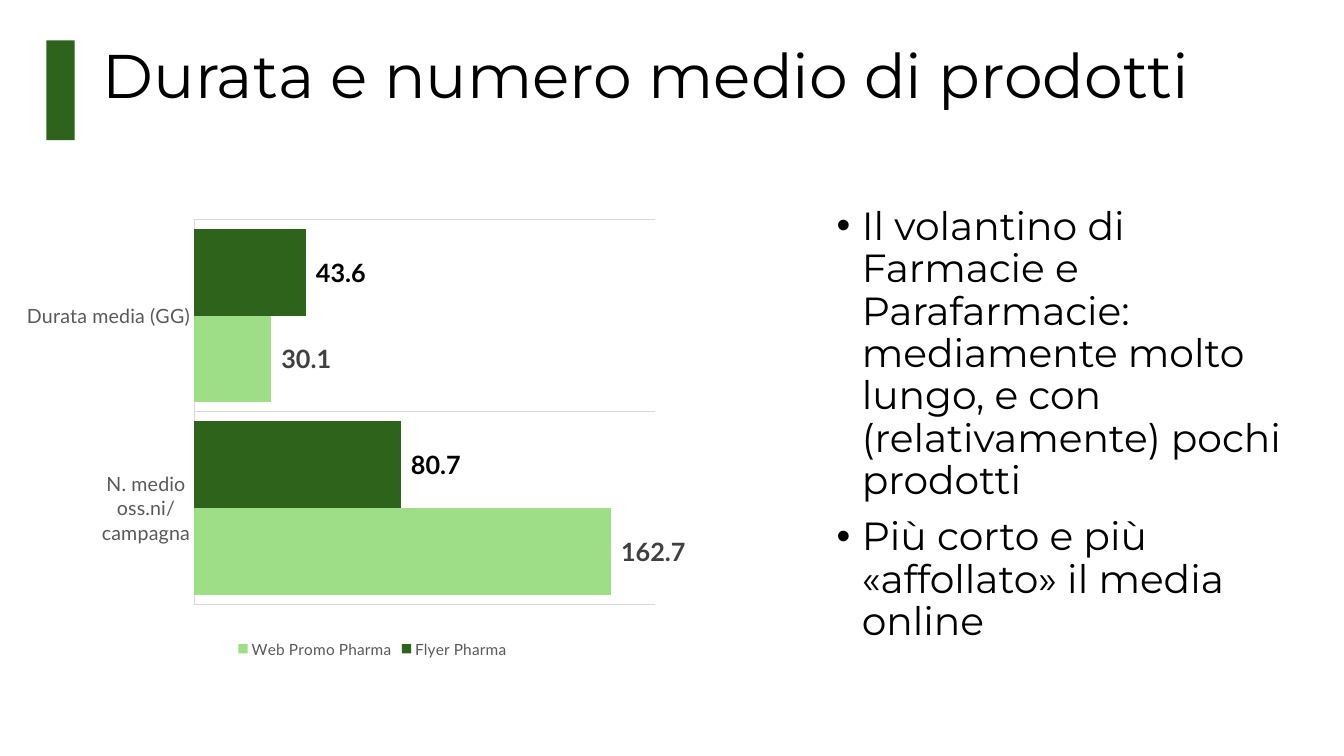
import dataclasses

import lxml.etree
import pptx
import pptx.chart.chart
import pptx.chart.data
import pptx.chart.series
import pptx.dml.color
import pptx.enum.chart
import pptx.enum.shapes
import pptx.oxml.ns
import pptx.slide
import pptx.text.text
import pptx.util

Inches = pptx.util.Inches
qn = pptx.oxml.ns.qn


def rgb(value: str) -> pptx.dml.color.RGBColor:
    return pptx.dml.color.RGBColor.from_string(value)


@dataclasses.dataclass(frozen=True)
class Theme:
    text_font: str = "Montserrat"
    chart_font: str = "Lato"
    black: str = "000000"
    dark_green: str = "2E631B"
    light_green: str = "9DDE86"
    label_gray: str = "404040"
    axis_gray: str = "595959"
    grid_gray: str = "D9D9D9"
    title_size: int = 44
    body_size: int = 28
    value_size: int = 18
    category_size: int = 14
    legend_size: int = 11
    chart_size: int = 10


THEME = Theme()
NUMBER_FORMAT = '_-* #,##0.0_-;\\-* #,##0.0_-;_-* "-"??_-;'


@dataclasses.dataclass(frozen=True)
class Area:
    left: float
    top: float
    width: float
    height: float

    def lengths(self) -> tuple:
        return tuple(Inches(value) for value in dataclasses.astuple(self))


@dataclasses.dataclass(frozen=True)
class BarSeries:
    name: str
    values: tuple
    fill: str
    label_color: str


CATEGORIES = ("Durata media (GG)", "N. medio oss.ni/campagna")
SERIES = (
    BarSeries("Flyer Pharma", (43.6, 80.7), THEME.dark_green, THEME.black),
    BarSeries("Web Promo Pharma", (30.1, 162.7), THEME.light_green, THEME.label_gray),
)
TITLE = ("Durata e numero medio di prodotti",)
POINTS = (
    "Il volantino di Farmacie e Parafarmacie: mediamente molto lungo, "
    "e con (relativamente) pochi prodotti",
    "Più corto e più «affollato» il media online",
)


def style_font(font: pptx.text.text.Font, name: str, size: int, color: str,
               bold: bool = False) -> None:
    font.name = name
    font.size = pptx.util.Pt(size)
    font.bold = bold
    font.color.rgb = rgb(color)


def add_bullet(para) -> None:
    properties = para._p.get_or_add_pPr()
    properties.set("marL", str(Inches(0.25)))
    properties.set("indent", str(Inches(-0.25)))
    lxml.etree.SubElement(properties, qn("a:buFont")).set("typeface", "Arial")
    lxml.etree.SubElement(properties, qn("a:buChar")).set("char", "•")


def add_text(page: pptx.slide.Slide, area: Area, lines: tuple, size: int,
             bulleted: bool = False) -> None:
    frame = page.shapes.add_textbox(*area.lengths()).text_frame
    frame.word_wrap = True
    for index, line in enumerate(lines):
        para = frame.add_paragraph() if index else frame.paragraphs[0]
        if bulleted:
            add_bullet(para)
        para.line_spacing = 0.9
        if index:
            para.space_before = pptx.util.Pt(10)
        span = para.add_run()
        span.text = line
        style_font(span.font, THEME.text_font, size, THEME.black)


def add_accent(page: pptx.slide.Slide, area: Area) -> None:
    bar = page.shapes.add_shape(pptx.enum.shapes.MSO_SHAPE.RECTANGLE, *area.lengths())
    bar.shadow.inherit = False
    bar.fill.solid()
    bar.fill.fore_color.rgb = rgb(THEME.dark_green)
    bar.line.fill.background()


def place_plot(chart: pptx.chart.chart.Chart, area: Area) -> None:
    """Fix the inner plot area, in fractions of the chart."""
    plot_area = chart._chartSpace.chart.plotArea
    for old in plot_area.findall(qn("c:layout")):
        plot_area.remove(old)
    layout = lxml.etree.Element(qn("c:layout"))
    plot_area.insert(0, layout)
    manual = lxml.etree.SubElement(layout, qn("c:manualLayout"))
    settings = [("layoutTarget", "inner"), ("xMode", "edge"), ("yMode", "edge")]
    settings += zip("xywh", dataclasses.astuple(area))
    for tag, value in settings:
        lxml.etree.SubElement(manual, qn(f"c:{tag}")).set("val", str(value))


def style_series(series: pptx.chart.series.BarSeries, bar: BarSeries) -> None:
    series.format.fill.solid()
    series.format.fill.fore_color.rgb = rgb(bar.fill)
    series.invert_if_negative = False
    labels = series.data_labels
    labels.show_value = True
    labels.position = pptx.enum.chart.XL_LABEL_POSITION.OUTSIDE_END
    labels.number_format = NUMBER_FORMAT
    labels.number_format_is_linked = False
    style_font(labels.font, THEME.chart_font, THEME.value_size, bar.label_color, True)


def add_bar_chart(page: pptx.slide.Slide, area: Area) -> None:
    data = pptx.chart.data.CategoryChartData(number_format=NUMBER_FORMAT)
    data.categories = CATEGORIES
    for bar in SERIES:
        data.add_series(bar.name, bar.values)
    kind = pptx.enum.chart.XL_CHART_TYPE.BAR_CLUSTERED
    chart = page.shapes.add_chart(kind, *area.lengths(), data).chart
    chart.has_title = False
    style_font(chart.font, THEME.chart_font, THEME.chart_size, THEME.black)
    place_plot(chart, Area(0.244, 0.039, 0.662, 0.835))

    # Bars and their values
    plot = chart.plots[0]
    plot.gap_width = 22
    plot.overlap = 0
    plot.vary_by_categories = False
    for series, bar in zip(plot.series, SERIES):
        style_series(series, bar)

    # Axes
    categories = chart.category_axis
    categories.reverse_order = True
    categories.major_tick_mark = pptx.enum.chart.XL_TICK_MARK.NONE
    categories.has_major_gridlines = True
    for line in (categories.format.line, categories.major_gridlines.format.line):
        line.color.rgb = rgb(THEME.grid_gray)
        line.width = pptx.util.Pt(0.75)
    style_font(categories.tick_labels.font, THEME.chart_font, THEME.category_size,
               THEME.axis_gray)
    values = chart.value_axis
    values.visible = False
    values.has_major_gridlines = False
    values.minimum_scale = 0
    values.maximum_scale = 180

    # Legend
    chart.has_legend = True
    chart.legend.position = pptx.enum.chart.XL_LEGEND_POSITION.BOTTOM
    chart.legend.include_in_layout = False
    style_font(chart.legend.font, THEME.chart_font, THEME.legend_size, THEME.axis_gray)


def main() -> None:
    deck = pptx.Presentation()
    deck.slide_width = Inches(13.33)
    deck.slide_height = Inches(7.5)
    page = deck.slides.add_slide(deck.slide_layouts[6])

    # Heading
    add_accent(page, Area(0.46, 0.4, 0.28, 0.99))
    add_text(page, Area(0.92, 0.4, 11.5, 1.45), TITLE, THEME.title_size)

    # Comments and chart
    add_text(page, Area(8.2, 2, 4.77, 4.76), POINTS, THEME.body_size, bulleted=True)
    add_bar_chart(page, Area(0.24, 2, 6.91, 4.57))

    deck.save("out.pptx")


if __name__ == "__main__":
    main()
